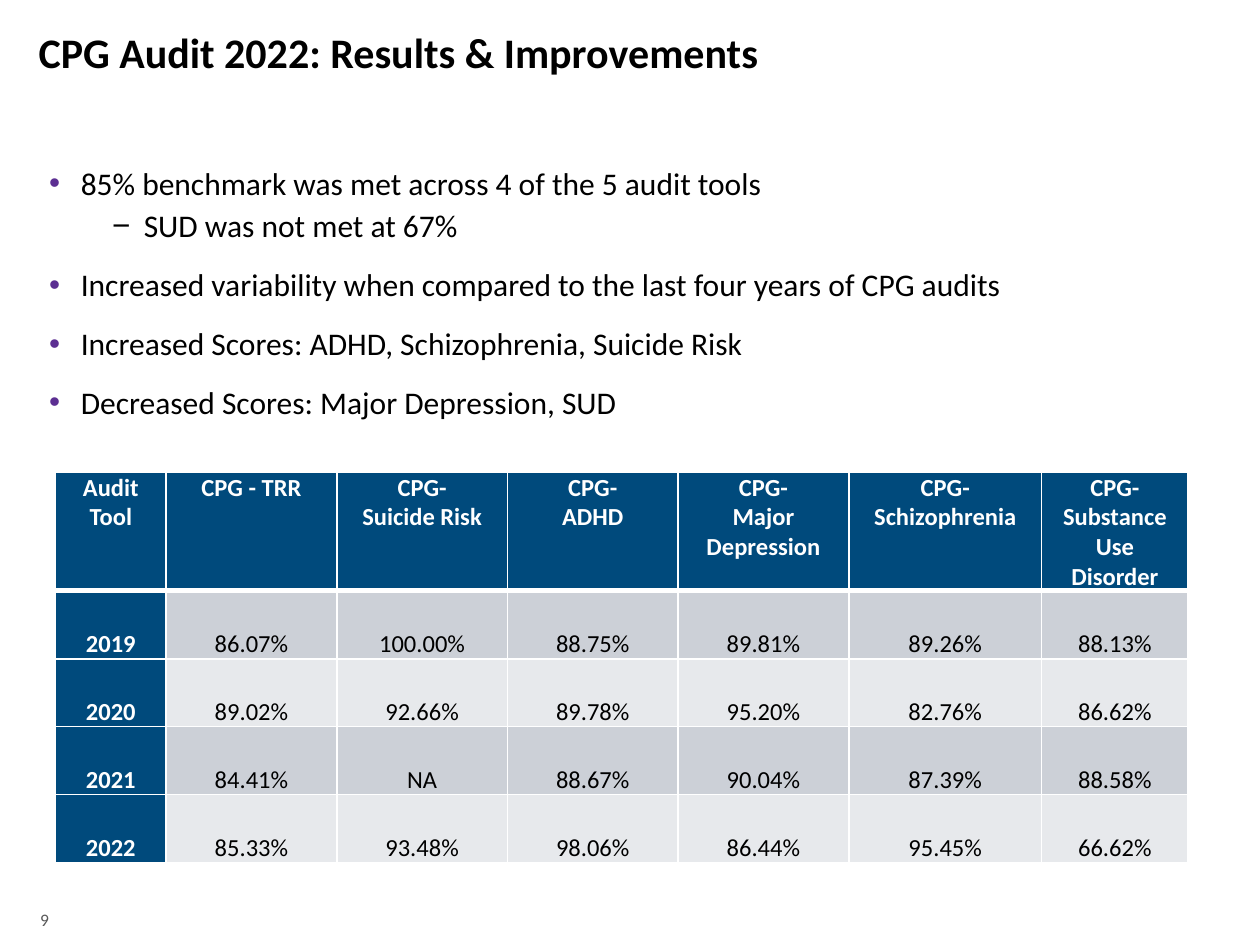
from dataclasses import dataclass

from lxml import etree
from pptx import Presentation
from pptx.dml.color import RGBColor
from pptx.enum.text import MSO_ANCHOR as Anchor, PP_ALIGN as Align
from pptx.oxml.ns import qn
from pptx.util import Cm, Pt


@dataclass(frozen=True)
class Theme:
    font: str = "Calibri"
    black: str = "000000"
    white: str = "FFFFFF"
    grey: str = "595959"
    purple: str = "5C2F92"
    navy: str = "004A7C"
    bands: tuple = ("CCD0D7", "E7E9EC")
    title_size: int = 24
    body_size: int = 18
    table_size: int = 14
    number_size: int = 10


theme = Theme()


def style(paragraph, size, color, bold=False):
    for run in paragraph.runs:
        run.font.name = theme.font
        run.font.size = Pt(size)
        run.font.bold = bold
        run.font.color.rgb = RGBColor.from_string(color)


def add_border(cell, side, width):
    line = etree.SubElement(cell._tc.get_or_add_tcPr(), qn(f"a:{side}"), w=str(Pt(width)))
    fill = etree.SubElement(line, qn("a:solidFill"))
    etree.SubElement(fill, qn("a:srgbClr"), val=theme.white)


prs = Presentation()
prs.slide_width, prs.slide_height = Cm(25.4), Cm(19.05)
slide = prs.slides.add_slide(prs.slide_layouts[6])

# Page number
number = slide.shapes.add_textbox(Cm(0.56), Cm(17.86), Cm(1.12), Cm(1.02)).text_frame
number.word_wrap = True
number.vertical_anchor = Anchor.BOTTOM
number.text = "9"
style(number.paragraphs[0], theme.number_size, theme.grey)

# Title
title = slide.shapes.add_textbox(Cm(0.53), Cm(0.53), Cm(21), Cm(3.15)).text_frame
title.word_wrap = True
title.text = "CPG Audit 2022: Results & Improvements"
title.paragraphs[0].line_spacing = 0.9
style(title.paragraphs[0], theme.title_size, theme.black, bold=True)

# Findings
findings = [
    (0, "85% benchmark was met across 4 of the 5 audit tools"),
    (1, "SUD was not met at 67%"),
    (0, "Increased variability when compared to the last four years of CPG audits"),
    (0, "Increased Scores: ADHD, Schizophrenia, Suicide Risk"),
    (0, "Decreased Scores: Major Depression, SUD"),
]
# Per level: bullet, bullet colour, left margin, space before, line spacing
levels = [
    ("•", theme.purple, Cm(0.64), Pt(12), 1.0),
    ("−", theme.black, Cm(1.91), Pt(5), 0.9),
]
body = slide.shapes.add_textbox(Cm(0.74), Cm(3.18), Cm(23.01), Cm(15.34)).text_frame
body.word_wrap = True
for i, (level, finding) in enumerate(findings):
    bullet, bullet_color, margin, space, spacing = levels[level]
    paragraph = body.add_paragraph() if i else body.paragraphs[0]
    paragraph.text = finding
    paragraph.level = level
    paragraph.line_spacing = spacing
    if i:
        paragraph.space_before = space
    props = paragraph._p.get_or_add_pPr()
    props.set("marL", str(margin))
    props.set("indent", str(-Cm(0.64)))
    color = etree.SubElement(props, qn("a:buClr"))
    etree.SubElement(color, qn("a:srgbClr"), val=bullet_color)
    etree.SubElement(props, qn("a:buFont"), typeface="Arial")
    etree.SubElement(props, qn("a:buChar"), char=bullet)
    style(paragraph, theme.body_size, theme.black)

# Audit scores by year
scores = [
    ["Audit Tool", "CPG - TRR", "CPG-\nSuicide Risk", "CPG-\nADHD",
     "CPG-\nMajor Depression", "CPG-\nSchizophrenia", "CPG- Substance Use Disorder"],
    ["2019", "86.07%", "100.00%", "88.75%", "89.81%", "89.26%", "88.13%"],
    ["2020", "89.02%", "92.66%", "89.78%", "95.20%", "82.76%", "86.62%"],
    ["2021", "84.41%", "NA", "88.67%", "90.04%", "87.39%", "88.58%"],
    ["2022", "85.33%", "93.48%", "98.06%", "86.44%", "95.45%", "66.62%"],
]
widths = [2.23, 3.44, 3.44, 3.44, 3.44, 3.89, 2.95]
heights = [2.38] + [1.37] * 4
table = slide.shapes.add_table(
    len(scores), len(widths), Cm(1.12), Cm(9.53), Cm(sum(widths)), Cm(sum(heights))
).table
for column, width in zip(table.columns, widths):
    column.width = Cm(width)
for row, height in zip(table.rows, heights):
    row.height = Cm(height)

for r, row_scores in enumerate(scores):
    for c, score in enumerate(row_scores):
        cell = table.cell(r, c)
        heading = r == 0 or c == 0
        cell.margin_left = cell.margin_right = Cm(0.18)
        cell.margin_top = cell.margin_bottom = 0
        cell.vertical_anchor = Anchor.BOTTOM if r else Anchor.TOP
        for side in ("lnL", "lnR", "lnT", "lnB"):
            thick = (r == 0 and side == "lnB") or (r == 1 and side == "lnT")
            add_border(cell, side, 3 if thick else 1)
        cell.fill.solid()
        cell.fill.fore_color.rgb = RGBColor.from_string(
            theme.navy if heading else theme.bands[(r - 1) % 2])
        cell.text_frame.text = score
        for paragraph in cell.text_frame.paragraphs:
            paragraph.alignment = Align.CENTER
            style(paragraph, theme.table_size,
                  theme.white if heading else theme.black, bold=heading)

prs.save("out.pptx")
